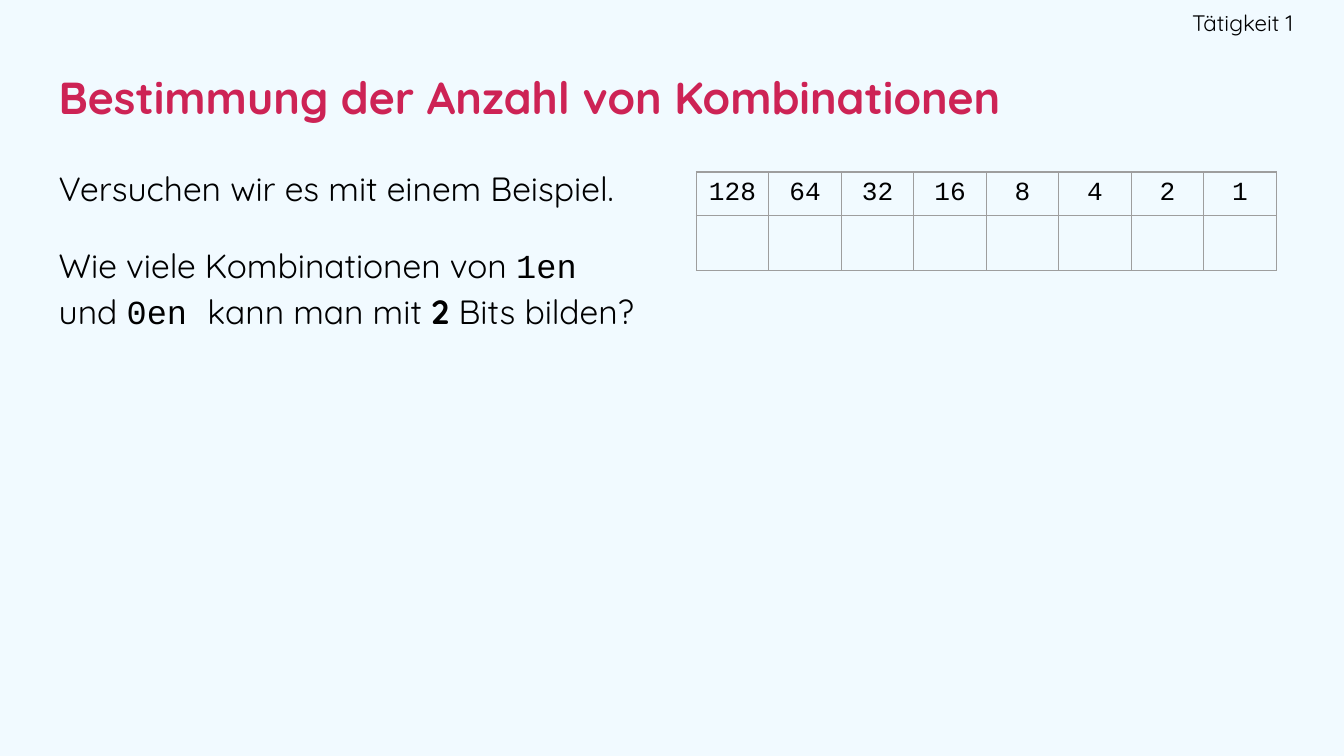
from lxml import etree
from pptx import Presentation
from pptx import util as u
from pptx.dml.color import RGBColor
from pptx.enum import text
from pptx.oxml import ns

BACKGROUND = RGBColor(0xF1, 0xFA, 0xFF)
PINK = RGBColor(0xCD, 0x23, 0x55)
BLACK = RGBColor(0, 0, 0)
GREY = RGBColor(0x9E, 0x9E, 0x9E)
SANS, MONO = "Quicksand", "Courier New"


def add_run(p, words, size, font=SANS, color=BLACK, bold=False):
    r = p.add_run()
    r.text = words
    for name, value in {"name": font, "size": u.Pt(size), "bold": bold}.items():
        setattr(r.font, name, value)
    r.font.color.rgb = color


def add_box(s, left, top, width, height, **frame):
    tf = s.shapes.add_textbox(*map(u.Cm, (left, top, width, height))).text_frame
    fmt = {"word_wrap": True, "auto_size": text.MSO_AUTO_SIZE.NONE}
    for side in ("left", "right", "top", "bottom"):
        fmt["margin_" + side] = u.Cm(0.25)
    for name, value in {**fmt, **frame}.items():
        setattr(tf, name, value)
    return tf


prs = Presentation()
prs.slide_width, prs.slide_height = u.Cm(25.4), u.Cm(14.29)
s = prs.slides.add_slide(prs.slide_layouts[6])
s.background.fill.solid()
s.background.fill.fore_color.rgb = BACKGROUND

# Body: example and question
tf = add_box(s, 0.86, 2.82, 11.38, 10.16)
p = tf.paragraphs[0]
p.line_spacing = 1.15
add_run(p, "Versuchen wir es mit einem Beispiel.", 18)
p = tf.add_paragraph()
for name, value in {"line_spacing": 1.15, "space_before": u.Pt(16),
                    "space_after": u.Pt(16)}.items():
    setattr(p, name, value)
for words, font, bold in [
    ("Wie viele Kombinationen von ", SANS, False),
    ("1en ", MONO, False),
    ("und ", SANS, False),
    ("0en ", MONO, False),
    ("kann man mit ", SANS, False),
    ("2 ", SANS, True),
    ("Bits bilden?", SANS, False),
]:
    add_run(p, words, 18, font, bold=bold)

# Title
tf = add_box(s, 0.86, 0.86, 23.67, 1.93, vertical_anchor=text.MSO_ANCHOR.MIDDLE)
add_run(tf.paragraphs[0], "Bestimmung der Anzahl von Kombinationen", 24,
        color=PINK, bold=True)

# Activity label, top right
tf = add_box(s, 19, 0, 5.44, 0.86, margin_right=0,
             vertical_anchor=text.MSO_ANCHOR.MIDDLE)
tf.paragraphs[0].alignment = text.PP_ALIGN.RIGHT
add_run(tf.paragraphs[0], "Tätigkeit 1", 12)

# Table of place values with an empty row for the bits
bits, col_width, row_heights = 8, 1.37, (0.81, 0.98)
tbl = s.shapes.add_table(2, bits, u.Cm(13.16), u.Cm(3.25),
                         u.Cm(bits * col_width), u.Cm(sum(row_heights))).table
tbl.first_row = tbl.horz_banding = False
for row, height in zip(tbl.rows, row_heights):
    row.height = u.Cm(height)
for i, col in enumerate(tbl.columns):
    col.width = u.Cm(col_width)
    p = tbl.cell(0, i).text_frame.paragraphs[0]
    p.alignment = text.PP_ALIGN.CENTER
    add_run(p, str(2 ** (bits - 1 - i)), 14, MONO)
for cell in tbl.iter_cells():
    for side in ("left", "right", "top", "bottom"):
        setattr(cell, "margin_" + side, u.Cm(0.13))
    tc_pr = cell._tc.get_or_add_tcPr()
    for edge in ("a:lnL", "a:lnR", "a:lnT", "a:lnB"):
        ln = etree.SubElement(tc_pr, ns.qn(edge), w=str(u.Pt(0.75)))
        fill = etree.SubElement(ln, ns.qn("a:solidFill"))
        etree.SubElement(fill, ns.qn("a:srgbClr"), val=str(GREY))
    cell.fill.background()

prs.save("out.pptx")
